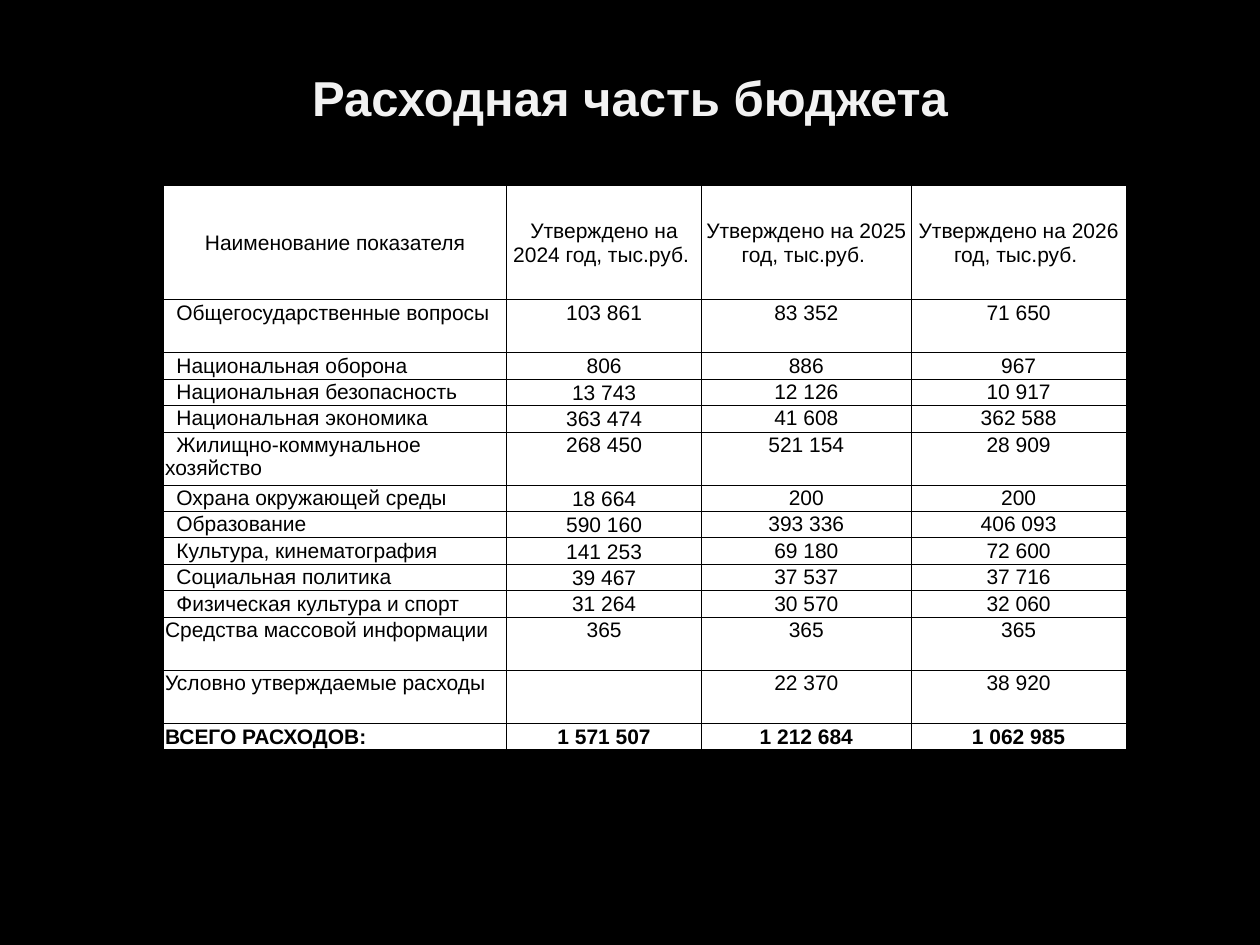
import pptx
import pptx.dml.color
import pptx.enum.text
import pptx.oxml
import pptx.oxml.ns
import pptx.util

Inches, Pt = pptx.util.Inches, pptx.util.Pt
ALIGN, ANCHOR = pptx.enum.text.PP_ALIGN, pptx.enum.text.MSO_ANCHOR

TITLE = "Расходная часть бюджета"
HEADER = ["Наименование показателя"] + [
    f"Утверждено на {year} год, тыс.руб. " for year in (2024, 2025, 2026)
]
EXPENSES = [
    ("Общегосударственные вопросы", "103 861", "83 352", "71 650"),
    ("Национальная оборона", "806", "886", "967"),
    ("Национальная безопасность", "13 743", "12 126", "10 917"),
    ("Национальная экономика", "363 474", "41 608", "362 588"),
    ("Жилищно-коммунальное хозяйство", "268 450", "521 154", "28 909"),
    ("Охрана окружающей среды", "18 664", "200", "200"),
    ("Образование", "590 160", "393 336", "406 093"),
    ("Культура, кинематография", "141 253", "69 180", "72 600"),
    ("Социальная политика", "39 467", "37 537", "37 716"),
    ("Физическая культура и спорт", "31 264", "30 570", "32 060"),
    ("Средства массовой информации", "365", "365", "365"),
    ("Условно утверждаемые расходы", "", "22 370", "38 920"),
]
TOTAL = ("ВСЕГО РАСХОДОВ:", "1 571 507", "1 212 684", "1 062 985")
ROWS = [HEADER, *EXPENSES, TOTAL]
LAST = len(ROWS) - 1
TALL_ROWS = {1, 5, 11, 12}
INDENTED_ROWS = range(1, 11)
COL_WIDTHS = [2.72, 1.55, 1.66, 1.71]
HEADER_H, LINE_H = 0.91, 0.21
MARGINS = {"margin_left": 0.01, "margin_right": 0.01, "margin_top": 0.01, "margin_bottom": 0}


def rgb(value):
    return pptx.dml.color.RGBColor.from_string(value)


def apply(obj, values):
    for name, value in values.items():
        setattr(obj, name, value)


def write(p, text, size, color, bold, align):
    p.alignment = align
    if text:
        r = p.add_run()
        r.text = text
        apply(r.font, {"name": "Arial", "size": Pt(size), "bold": bold})
        r.font.color.rgb = rgb(color)


def add_borders(cell, color="000000", width=0.5):
    tcPr = cell._tc.get_or_add_tcPr()
    for side in ("lnL", "lnR", "lnT", "lnB"):
        tcPr.append(pptx.oxml.parse_xml(
            f'<a:{side} {pptx.oxml.ns.nsdecls("a")} w="{Pt(width)}">'
            f'<a:solidFill><a:srgbClr val="{color}"/></a:solidFill></a:{side}>'))


def row_height(row):
    if row == 0:
        return HEADER_H
    return LINE_H * (2 if row in TALL_ROWS else 1)


def cell_anchor(row, col):
    if row == LAST and col == 0:
        return ANCHOR.BOTTOM
    short_first_year = col == 1 and row not in TALL_ROWS
    return ANCHOR.MIDDLE if row in (0, LAST) or short_first_year else ANCHOR.TOP


def fill_cell(cell, text, row, col):
    add_borders(cell)
    cell.fill.solid()
    cell.fill.fore_color.rgb = rgb("FFFFFF")
    apply(cell, {name: Inches(value) for name, value in MARGINS.items()})
    cell.vertical_anchor = cell_anchor(row, col)
    p = cell.text_frame.paragraphs[0]
    align = ALIGN.LEFT if col == 0 and row else ALIGN.CENTER
    write(p, text, 12, "000000", row == LAST, align)
    if col == 0 and row in INDENTED_ROWS:
        p._p.get_or_add_pPr().set("indent", str(Inches(0.09)))


def add_title(s):
    sp = s.shapes.title
    box = zip(("left", "top", "width", "height"), (0.5, 0.29, 9, 0.96))
    apply(sp, {name: Inches(value) for name, value in box})
    tf = sp.text_frame
    apply(tf, {"word_wrap": True, "vertical_anchor": ANCHOR.MIDDLE})
    write(tf.paragraphs[0], TITLE, 28, "F2F2F2", True, ALIGN.CENTER)


def add_budget_table(s):
    heights = [row_height(row) for row in range(len(ROWS))]
    table = s.shapes.add_table(
        len(ROWS), len(COL_WIDTHS), Inches(1.3), Inches(1.47),
        Inches(sum(COL_WIDTHS)), Inches(sum(heights))).table
    apply(table, {"first_row": False, "horz_banding": False})
    for column, width in zip(table.columns, COL_WIDTHS):
        column.width = Inches(width)
    for row, (values, height) in enumerate(zip(ROWS, heights)):
        table.rows[row].height = Inches(height)
        for col, text in enumerate(values):
            fill_cell(table.cell(row, col), text, row, col)


def main():
    prs = pptx.Presentation()
    apply(prs, {"slide_width": Inches(10), "slide_height": Inches(7.5)})
    s = prs.slides.add_slide(prs.slide_layouts[5])
    s.background.fill.solid()
    s.background.fill.fore_color.rgb = rgb("000000")
    add_title(s)
    add_budget_table(s)
    prs.save("out.pptx")


if __name__ == "__main__":
    main()
